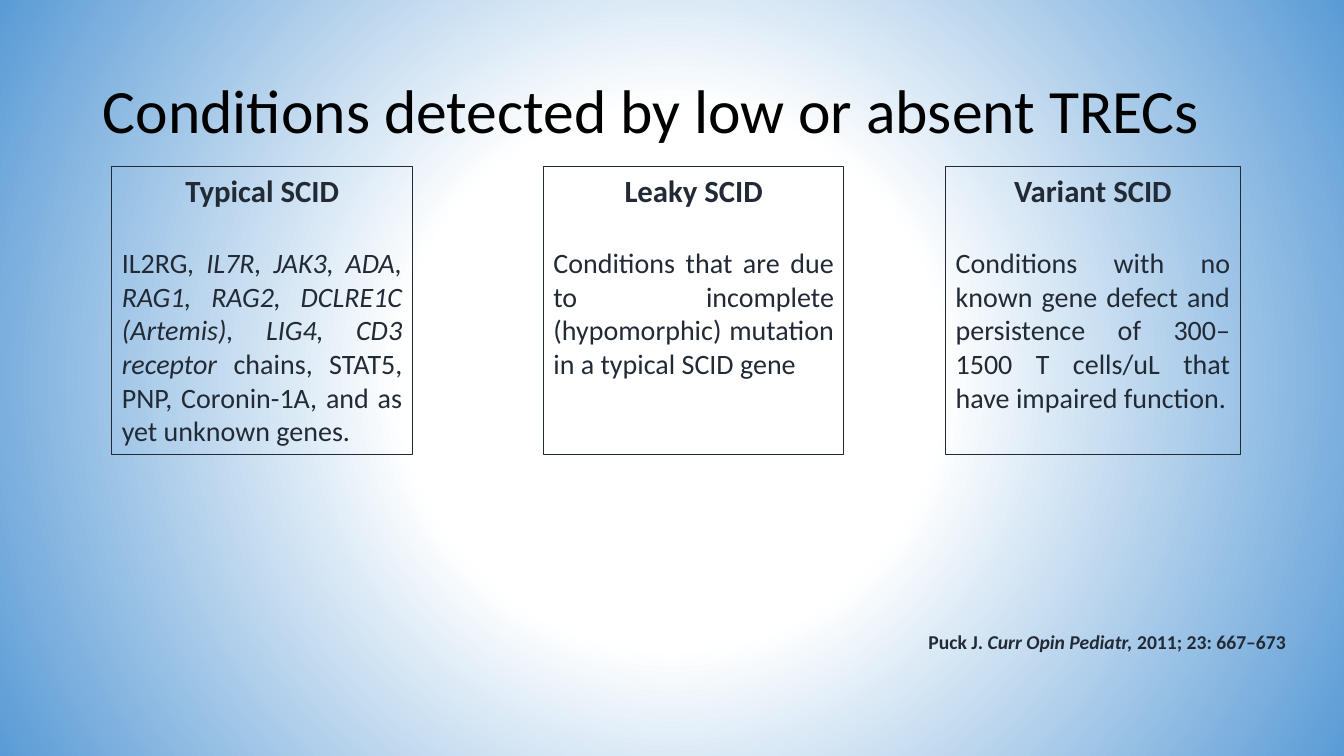
from dataclasses import dataclass

from lxml.etree import SubElement
from pptx import Presentation
from pptx.dml.color import RGBColor
from pptx.enum.shapes import MSO_SHAPE as Preset
from pptx.enum.text import MSO_ANCHOR as Anchor, PP_ALIGN as Align
from pptx.oxml.ns import qn
from pptx.slide import Slide
from pptx.text.text import _Paragraph as Paragraph
from pptx.util import Inches, Pt

FONT = "Calibri"
COLORS = {"title": "000000", "ink": "222A35", "center": "FFFFFF", "edge": "5A9BD5"}
GRADIENT_STOPS = ((0, "center"), (35, "center"), (100, "edge"))
BOX_TOP, BOX_HEIGHT = 1.65, 2.86
HEADING_GAP = 26.8


@dataclass(frozen=True)
class Span:
    text: str
    italic: bool = False


@dataclass(frozen=True)
class Condition:
    heading: str
    description: tuple[Span, ...]
    left: float
    width: float = 2.98


CONDITIONS = (
    Condition("Typical SCID", (
        Span("IL2RG"),
        Span(", IL7R, JAK3, ADA, RAG1, RAG2, DCLRE1C (Artemis), LIG4, CD3 receptor ", True),
        Span("chains, STAT5, PNP, Coronin-1A, and as yet unknown genes."),
    ), left=1.11),
    Condition("Leaky SCID", (
        Span("Conditions that are due to incomplete (hypomorphic) mutation in a typical SCID gene"),
    ), left=5.39),
    Condition("Variant SCID", (
        Span("Conditions with no known gene defect and persistence of 300–1500 T cells/uL "
             "that have impaired function."),
    ), left=9.38, width=2.92),
)
CITATION = (Span("Puck J. "), Span("Curr Opin Pediatr, ", True), Span("2011; 23: 667–673"))


def write(paragraph: Paragraph, spans: tuple[Span, ...], size: float, align: Align,
          bold: bool = False, color: str = "ink") -> None:
    paragraph.alignment = align
    font = paragraph.font
    font.name, font.size, font.bold = FONT, Pt(size), bold
    font.color.rgb = RGBColor.from_string(COLORS[color])
    for span in spans:
        run = paragraph.add_run()
        run.text = span.text
        if span.italic:
            run.font.italic = True


def paint_background(slide: Slide) -> None:
    """Fill the background with a circular gradient spreading from the middle."""
    slide.background.fill.gradient()
    gradient = next(slide.element.iter(qn("a:gradFill")))
    for child in list(gradient):
        gradient.remove(child)
    stops = SubElement(gradient, qn("a:gsLst"))
    for percent, color in GRADIENT_STOPS:
        stop = SubElement(stops, qn("a:gs"), pos=str(percent * 1000))
        SubElement(stop, qn("a:srgbClr"), val=COLORS[color])
    circle = SubElement(gradient, qn("a:path"), path="circle")
    SubElement(circle, qn("a:fillToRect"), l="50000", t="50000", r="50000", b="50000")


def add_title(slide: Slide) -> None:
    title = slide.shapes.title
    title.left, title.top = Inches(0.92), Inches(0.4)
    title.width, title.height = Inches(11.5), Inches(1.45)
    title.text_frame.vertical_anchor = Anchor.MIDDLE
    line = title.text_frame.paragraphs[0]
    line.line_spacing = 0.9
    write(line, (Span("Conditions detected by low or absent TRECs"),), 44, Align.LEFT,
          color="title")


def add_condition(slide: Slide, condition: Condition) -> None:
    box = slide.shapes.add_shape(
        Preset.RECTANGLE, Inches(condition.left), Inches(BOX_TOP),
        Inches(condition.width), Inches(BOX_HEIGHT))
    box.shadow.inherit = False
    box.fill.background()
    box.line.color.rgb = RGBColor.from_string(COLORS["ink"])
    box.line.width = Pt(0.75)
    frame = box.text_frame
    frame.word_wrap = True
    frame.vertical_anchor = Anchor.TOP
    write(frame.paragraphs[0], (Span(condition.heading),), 22, Align.CENTER, bold=True)
    description = frame.add_paragraph()
    description.space_before = Pt(HEADING_GAP)
    write(description, condition.description, 20, Align.JUSTIFY)


def add_citation(slide: Slide) -> None:
    citation = slide.shapes.add_textbox(Inches(9.11), Inches(6.2), Inches(4.18), Inches(0.34))
    citation.text_frame.word_wrap = True
    write(citation.text_frame.paragraphs[0], CITATION, 14, Align.LEFT, bold=True)


def main() -> None:
    deck = Presentation()
    deck.slide_width, deck.slide_height = Inches(13.33), Inches(7.5)
    slide = deck.slides.add_slide(deck.slide_layouts.get_by_name("Title Only"))
    paint_background(slide)
    add_title(slide)
    for condition in CONDITIONS:
        add_condition(slide, condition)
    add_citation(slide)
    deck.save("out.pptx")


if __name__ == "__main__":
    main()
